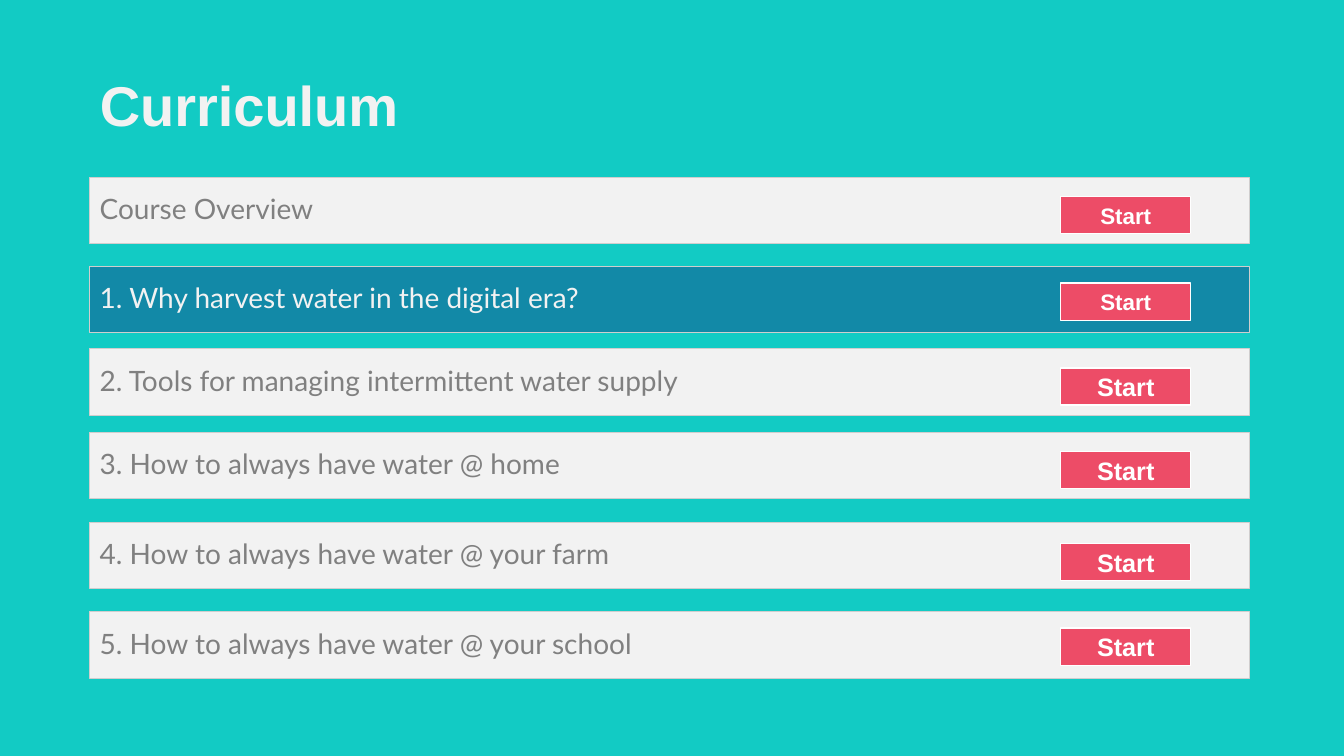
"""Build the Curriculum slide: a title and six course rows with Start buttons."""
from pptx import Presentation
from pptx.dml.color import RGBColor
from pptx.enum.shapes import MSO_SHAPE
from pptx.enum.text import MSO_ANCHOR, MSO_AUTO_SIZE, PP_ALIGN
from pptx.util import Inches, Pt

COLORS = {
    "background": "12CBC4",
    "row": "F2F2F2",
    "active": "1289A7",
    "border": "D0CECE",
    "text": "808080",
    "button": "ED4C67",
    "white": "FFFFFF",
}
LEFT, WIDTH = 0.89, 11.5
LESSONS = [
    ("Course Overview", 1.76, 1.95, 16),
    ("1. Why harvest water in the digital era?", 2.64, 2.81, 16),
    ("2. Tools for managing intermittent water supply", 3.46, 3.65, 18),
    ("3. How to always have water @ home", 4.29, 4.48, 18),
    ("4. How to always have water @ your farm", 5.18, 5.39, 18),
    ("5. How to always have water @ your school", 6.07, 6.23, 18),
]
ACTIVE_LESSON = 1


def write(shape, text, font, size, color, bold=False, align=PP_ALIGN.LEFT, spacing=0.9):
    """Put one formatted line of text in a shape."""
    frame = shape.text_frame
    frame.text = text
    frame.word_wrap = True
    frame.auto_size = MSO_AUTO_SIZE.NONE
    frame.vertical_anchor = MSO_ANCHOR.MIDDLE
    para = frame.paragraphs[0]
    para.alignment = align
    para.line_spacing = spacing
    para.space_before = Pt(0)
    span = para.runs[0]
    span.font.name = font
    span.font.size = Pt(size)
    span.font.bold = bold
    span.font.color.rgb = RGBColor.from_string(COLORS[color])


def add_box(left, top, width, height, fill, line, line_width):
    """Add a flat outlined rectangle."""
    box = page.shapes.add_shape(
        MSO_SHAPE.RECTANGLE, Inches(left), Inches(top), Inches(width), Inches(height))
    box.shadow.inherit = False
    box.fill.solid()
    box.fill.fore_color.rgb = RGBColor.from_string(COLORS[fill])
    box.line.color.rgb = RGBColor.from_string(COLORS[line])
    box.line.width = Pt(line_width)
    return box


deck = Presentation()
deck.slide_width = Inches(13.33)
deck.slide_height = Inches(7.5)
page = deck.slides.add_slide(deck.slide_layouts[5])
page.background.fill.solid()
page.background.fill.fore_color.rgb = RGBColor.from_string(COLORS["background"])

title = page.shapes.title
title.left, title.top = Inches(LEFT), Inches(0.69)
title.width, title.height = Inches(WIDTH), Inches(0.77)
write(title, "Curriculum", "Arial", 40, "row", bold=True)

for number, (lesson, row_top, button_top, button_size) in enumerate(LESSONS):
    active = number == ACTIVE_LESSON
    row = add_box(LEFT, row_top, WIDTH, 0.66, "active" if active else "row", "border", 0.75)
    write(row, lesson, "Lato", 20, "row" if active else "text")
    button = add_box(10.52, button_top, 1.29, 0.37, "button", "white", 1)
    write(button, "Start", "Arial", button_size, "white", bold=True,
          align=PP_ALIGN.CENTER, spacing=1.0)

deck.save("out.pptx")
